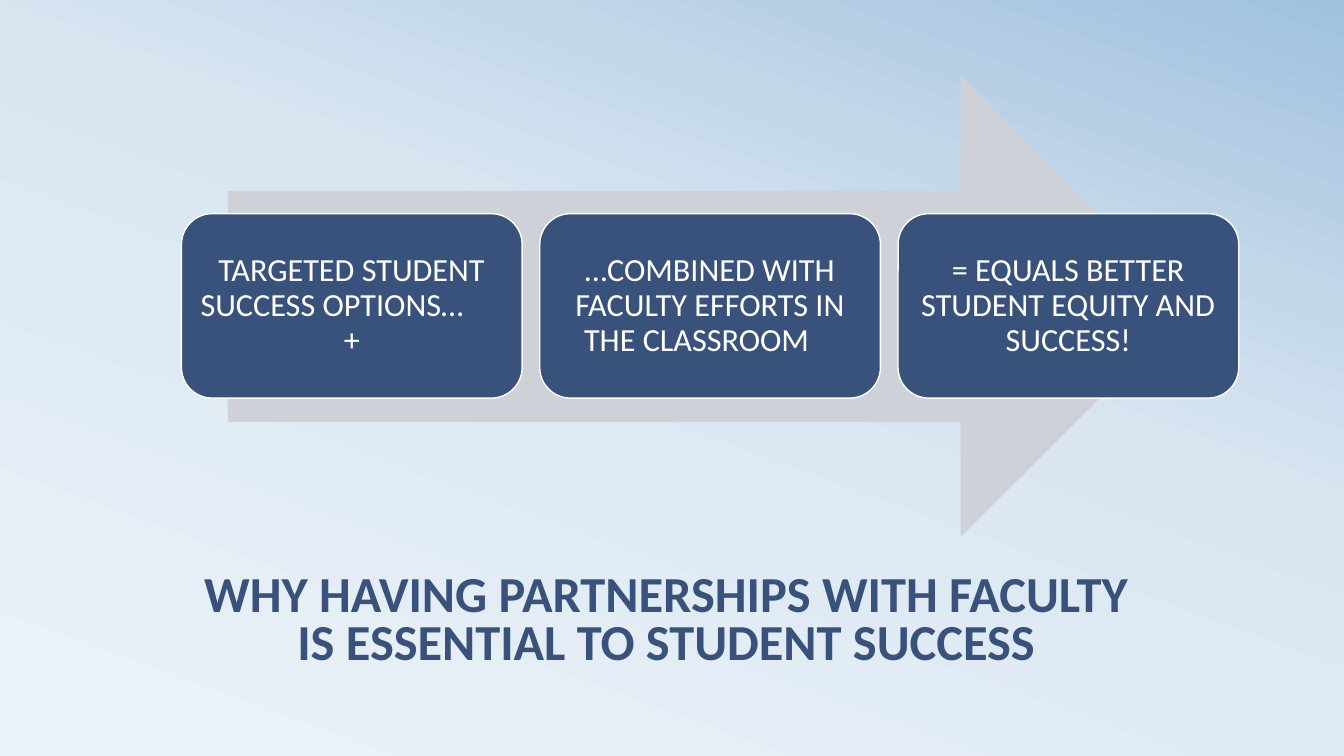
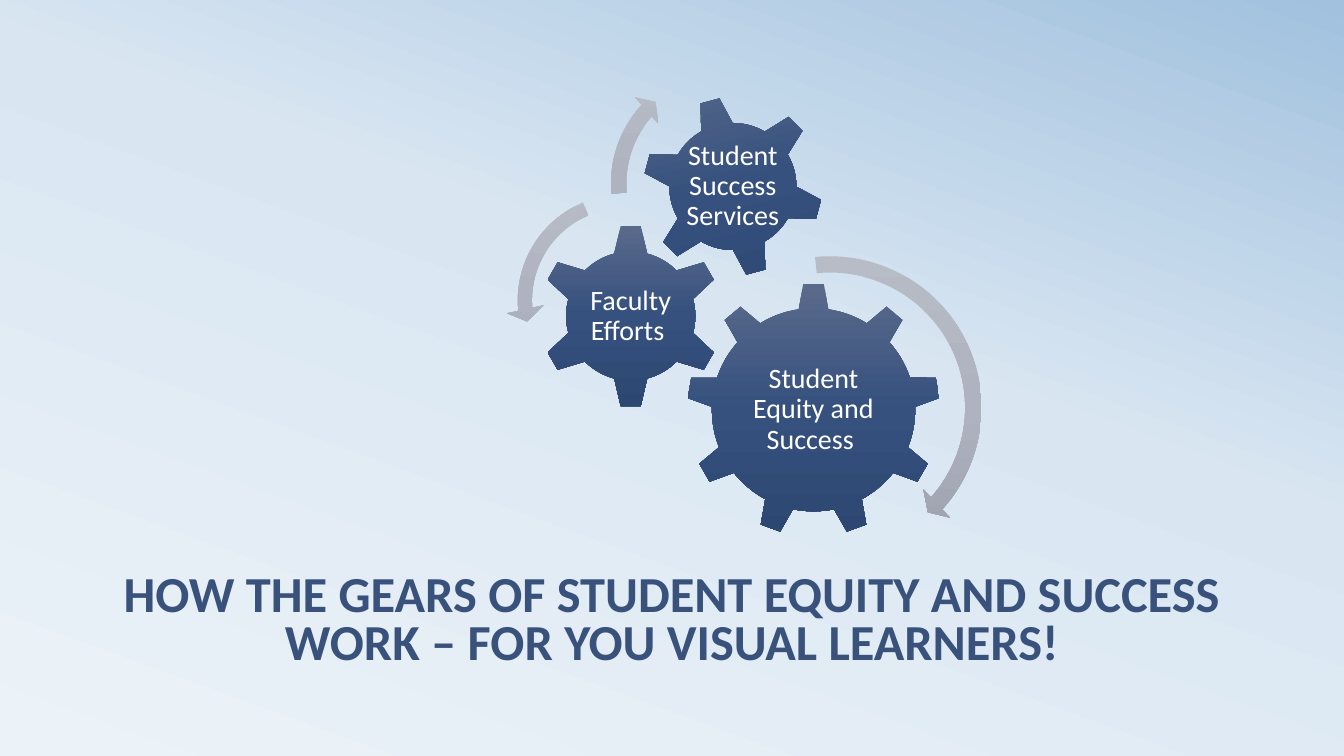
from copy import deepcopy

from pptx import Presentation
from pptx import util as u
from pptx.dml.color import RGBColor
from pptx.enum import shapes, text
from pptx.oxml.ns import qn

COLOURS = {"navy": "39527B", "white": "FFFFFF", "grey": "CED1D7"}

# Gradients: clockwise angle, then (position, colour) stops
GRADIENTS = {
    "sky": (290, [(0, "ECF3F8"), (0.58, "D9E6F2"), (1, "A1C1DE")]),
    "gear": (90, [(0, "5A6A8B"), (0.5, "36517E"), (1, "2D4773")]),
    "swoosh": (90, [(0, "B8BCC6"), (0.5, "AEB3BF"), (1, "9A9EAB")]),
}

# Text styles: size, weight, colour, line spacing, anchor and inset in inches
STYLES = {
    "title": dict(font=dict(size=u.Pt(36), bold=True), colour="navy",
                  spacing=0.8, anchor=text.MSO_ANCHOR.BOTTOM, inset=0.1),
    "panel": dict(font=dict(size=u.Pt(23), bold=False), colour="white",
                  spacing=0.9, anchor=text.MSO_ANCHOR.MIDDLE, inset=0.1),
    "gear": dict(font=dict(size=u.Pt(20), bold=False), colour="white",
                 spacing=0.9, anchor=text.MSO_ANCHOR.MIDDLE, inset=0.03),
}

SHAPE = shapes.MSO_SHAPE


class Deck:
    """Holds the style and the current page; lengths are percent of the page."""

    def __init__(self):
        self.deck = Presentation()
        self.deck.slide_width = u.Inches(13.33)
        self.deck.slide_height = u.Inches(7.5)
        self.page = None

    def frame(self, left, top, width, height):
        wide, high = self.deck.slide_width, self.deck.slide_height
        return [int(share * side / 100) for share, side in
                zip((left, top, width, height), (wide, high, wide, high))]

    def square(self, x, y, size):
        """Square around a centre, its side a share of the page width."""
        height = size * self.deck.slide_width / self.deck.slide_height
        return x - size / 2, y - height / 2, size, height

    def paint(self, fill, element, name):
        if name in COLOURS:
            fill.solid()
            fill.fore_color.rgb = RGBColor.from_string(COLOURS[name])
            return
        angle, stops = GRADIENTS[name]
        fill.gradient()
        fill.gradient_angle = 360 - angle
        stop_list = next(element.iter(qn("a:gsLst")))
        while len(stop_list) < len(stops):
            stop_list.append(deepcopy(stop_list[0]))
        for stop, (position, colour) in zip(fill.gradient_stops, stops):
            stop.position = position
            stop.color.rgb = RGBColor.from_string(colour)

    def set_text(self, box, words, style_name):
        style = STYLES[style_name]
        frame = box.text_frame
        inset = u.Inches(style["inset"])
        layout = dict(word_wrap=True, vertical_anchor=style["anchor"],
                      margin_left=inset, margin_right=inset,
                      margin_top=inset, margin_bottom=inset)
        for name, value in layout.items():
            setattr(frame, name, value)
        para = frame.paragraphs[0]
        para.text = words
        para.alignment = text.PP_ALIGN.CENTER
        para.line_spacing = style["spacing"]
        for span in para.runs:
            for name, value in dict(style["font"], name="Calibri").items():
                setattr(span.font, name, value)
            span.font.color.rgb = RGBColor.from_string(COLOURS[style["colour"]])

    def add_page(self, title):
        self.page = self.deck.slides.add_slide(self.deck.slide_layouts[6])
        self.paint(self.page.background.fill, self.page.element, "sky")
        self.label(title, (5, 74.4, 90, 15.6), "title")

    def label(self, words, place, style_name):
        box = self.page.shapes.add_textbox(*self.frame(*place))
        self.set_text(box, words, style_name)

    def shape(self, kind, place, fill, adjustments=()):
        shape = self.page.shapes.add_shape(kind, *self.frame(*place))
        shape.shadow.inherit = False
        self.paint(shape.fill, shape.element, fill)
        shape.line.fill.background()
        for index, value in enumerate(adjustments):
            shape.adjustments[index] = value
        return shape

    def panel(self, words, place):
        panel = self.shape(SHAPE.ROUNDED_RECTANGLE, place, "navy")
        self.paint(panel.line.fill, panel.element, "white")
        panel.line.width = u.Pt(1)
        self.set_text(panel, words, "panel")

    def gear(self, kind, x, y, size, words, label_width, rotation=0):
        gear = self.shape(kind, self.square(x, y, size), "gear")
        gear.rotation = rotation
        self.label(words, self.square(x, y, label_width), "gear")

    def swoosh(self, kind, x, y, size, adjustments):
        self.shape(kind, self.square(x, y, size), "swoosh", adjustments)


def add_partnership_page(deck):
    deck.add_page("WHY HAVING PARTNERSHIPS WITH FACULTY \v"
                  "IS ESSENTIAL TO STUDENT SUCCESS ")
    deck.shape(SHAPE.RIGHT_ARROW, (16.95, 10, 71.7, 61.07), "grey")

    # Three steps at equal distance along the arrow
    steps = ["TARGETED STUDENT SUCCESS OPTIONS…\t+",
             "…COMBINED WITH FACULTY EFFORTS IN THE CLASSROOM \t",
             "= EQUALS BETTER STUDENT EQUITY AND SUCCESS!"]
    for column, words in enumerate(steps):
        deck.panel(words, (13.5 + column * 26.66, 28.27, 25.35, 24.4))


def add_gears_page(deck):
    deck.add_page("HOW THE GEARS OF STUDENT EQUITY AND SUCCESS WORK "
                  "– FOR YOU VISUAL LEARNERS!")

    # Gears with their labels
    deck.gear(SHAPE.GEAR_9, 60.53, 54.2, 18.9,
              "Student Equity and Success ", 11.33)
    deck.gear(SHAPE.GEAR_6, 46.93, 41.8, 13.73, "Faculty Efforts ", 6.83)
    deck.gear(SHAPE.GEAR_6, 54.53, 24.67, 13.5,
              "Student Success Services", 7.58, rotation=345)

    # Arrows showing which way each gear turns
    deck.swoosh(SHAPE.CIRCULAR_ARROW, 61.76, 53.93, 24.23,
                (0.05, 2.99, 25.16, 158.61, 0.06))
    deck.swoosh(SHAPE.LEFT_CIRCULAR_ARROW, 46.43, 39.73, 17.55,
                (0.06, 4.3, 104.89, 148.38, 0.08))
    deck.swoosh(SHAPE.CIRCULAR_ARROW, 54.19, 24.33, 18.98,
                (0.06, 3.94, 133.14, 105.08, 0.07))


def main():
    deck = Deck()
    add_partnership_page(deck)
    add_gears_page(deck)
    deck.deck.save("out.pptx")


if __name__ == "__main__":
    main()
